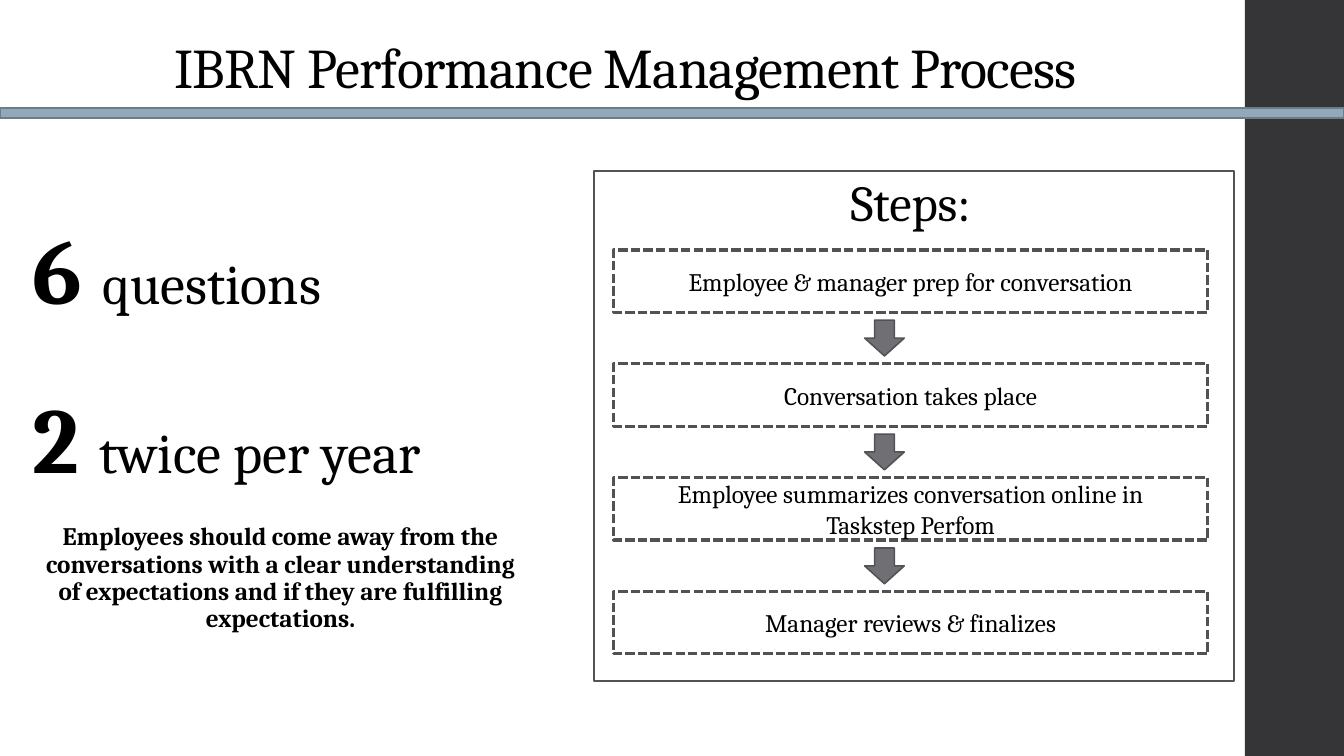
from dataclasses import dataclass

from pptx import Presentation
from pptx import util as u
from pptx.dml.color import RGBColor
from pptx.enum import dml, shapes, text

TITLE = "IBRN Performance Management Process"
FACTS = [("6 ", "questions"), ("2 ", "twice per year")]
TAKEAWAY = ("Employees should come away from the conversations with a clear "
            "understanding of expectations and if they are fulfilling expectations.")
STEPS_HEADING = "Steps:"
STEPS = [
    "Employee & manager prep for conversation",
    "Conversation takes place",
    "Employee summarizes conversation online in Taskstep Perfom",
    "Manager reviews & finalizes",
]


@dataclass(frozen=True)
class Theme:
    font: str = "Cambria"
    ink: str = "000000"
    band: str = "353537"
    rule: str = "92A9B9"
    rule_edge: str = "6C7D89"
    panel_edge: str = "535357"
    step_edge: str = "525256"
    arrow: str = "6F6F74"
    numeral: int = 66
    title: int = 40
    heading: int = 36
    body: int = 18


theme = Theme()
SLIDE_W, SLIDE_H = 33.87, 19.05
FACT_TOP, FACT_PITCH = 5.23, 4.24
STEP_LEFT, STEP_TOP, STEP_W, STEP_H, STEP_PITCH = 15.47, 6.3, 14.96, 1.57, 2.87
ARROW_LEFT, ARROW_W, ARROW_H = 21.79, 1, 0.9

deck = Presentation()
deck.slide_width, deck.slide_height = u.Cm(SLIDE_W), u.Cm(SLIDE_H)
slide = deck.slides.add_slide(deck.slide_layouts[6])


def add_block(kind, box, fill=None, edge=None, weight=1.1):
    block = slide.shapes.add_shape(kind, *map(u.Cm, box))
    block.shadow.inherit = False
    if fill:
        block.fill.solid()
        block.fill.fore_color.rgb = RGBColor.from_string(fill)
    else:
        block.fill.background()
    if edge:
        block.line.color.rgb = RGBColor.from_string(edge)
        block.line.width = u.Pt(weight)
    else:
        block.line.fill.background()
    return block


def style(run, size, bold=False):
    run.font.name = theme.font
    run.font.size = u.Pt(size)
    run.font.bold = bold
    run.font.color.rgb = RGBColor.from_string(theme.ink)


def write(shape, words, size, bold=False, anchor=text.MSO_ANCHOR.TOP):
    frame = shape.text_frame
    frame.word_wrap = True
    frame.vertical_anchor = anchor
    frame.text = words
    paragraph = frame.paragraphs[0]
    paragraph.alignment = text.PP_ALIGN.CENTER
    style(paragraph.runs[0], size, bold)
    return paragraph


def add_text(box, words, size, **options):
    return write(slide.shapes.add_textbox(*map(u.Cm, box)), words, size, **options)


RECT = shapes.MSO_SHAPE.RECTANGLE
add_block(RECT, (31.37, 0, SLIDE_W - 31.37, SLIDE_H), fill=theme.band)

for row, (numeral, label) in enumerate(FACTS):
    fact = add_text((0.56, FACT_TOP + row * FACT_PITCH, 13.03, 3.07),
                    numeral, theme.numeral, bold=True)
    fact.alignment = text.PP_ALIGN.LEFT
    label_run = fact.add_run()
    label_run.text = label
    style(label_run, theme.title)

add_block(RECT, (14.96, 4.32, 16.15, 12.85), edge=theme.panel_edge, weight=1.35)
add_text((20.88, 4.19, 4.14, 1.8), STEPS_HEADING, theme.heading)

for row, step in enumerate(STEPS):
    top = STEP_TOP + row * STEP_PITCH
    step_box = add_block(RECT, (STEP_LEFT, top, STEP_W, STEP_H),
                         edge=theme.step_edge, weight=2.25)
    step_box.line.dash_style = dml.MSO_LINE.SQUARE_DOT
    frame = step_box.text_frame
    frame.margin_left = frame.margin_right = u.Cm(0.56)
    frame.margin_top = frame.margin_bottom = 0
    write(step_box, step, theme.body, anchor=text.MSO_ANCHOR.MIDDLE)
    if row < len(STEPS) - 1:
        arrow_top = top + (STEP_H + STEP_PITCH - ARROW_H) / 2
        add_block(shapes.MSO_SHAPE.DOWN_ARROW,
                  (ARROW_LEFT, arrow_top, ARROW_W, ARROW_H),
                  fill=theme.arrow, edge=theme.step_edge)

title = add_text((0.76, -0.08, 30, 2.74), TITLE, theme.title,
                 anchor=text.MSO_ANCHOR.BOTTOM)
title.line_spacing = 0.9
title.runs[0].font._element.set("spc", "-50")

add_block(RECT, (0, 2.72, SLIDE_W, 0.26), fill=theme.rule, edge=theme.rule_edge)

takeaway = add_text((0.86, 13.08, 12.42, 3.4), TAKEAWAY, theme.body, bold=True)
takeaway.line_spacing = 0.9
takeaway.space_before = u.Pt(12)

deck.save("out.pptx")
